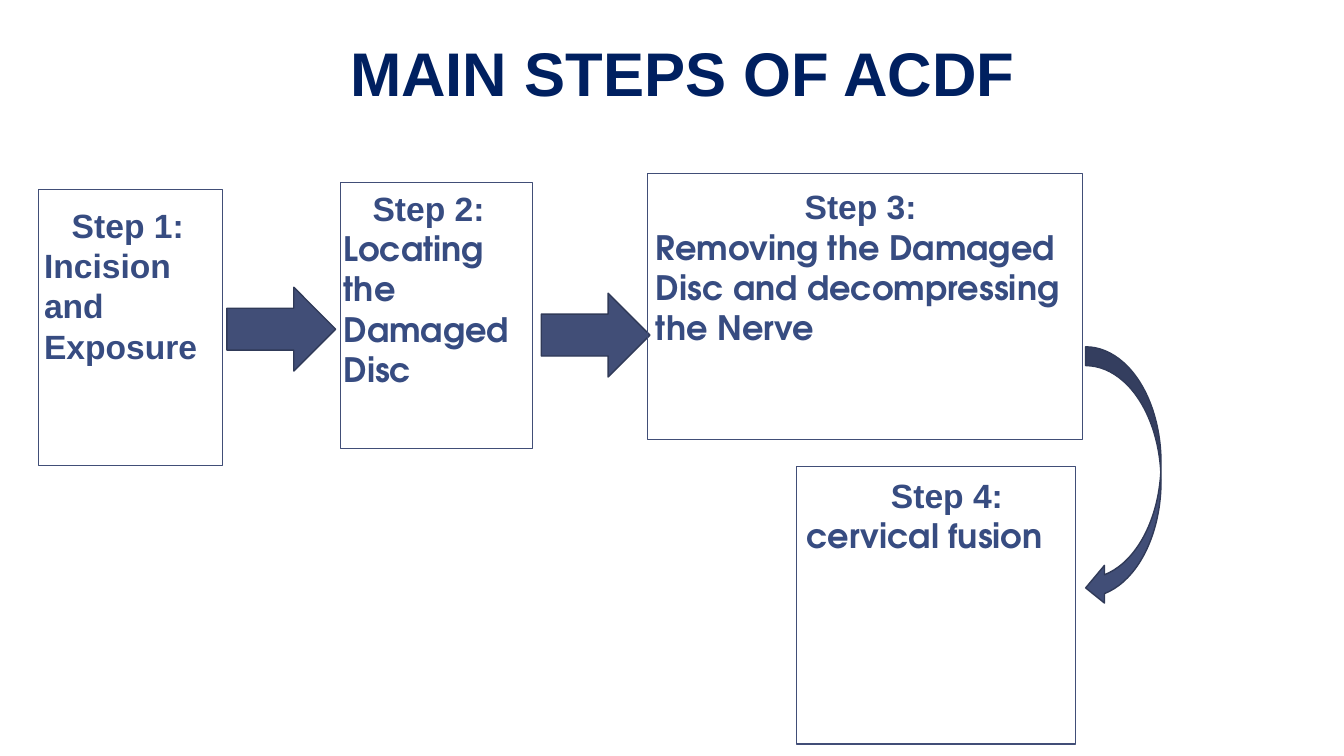
from typing import NamedTuple

from lxml import etree
from pptx import Presentation
from pptx.dml.color import RGBColor
from pptx.enum.shapes import MSO_SHAPE
from pptx.enum.text import MSO_ANCHOR, MSO_AUTO_SIZE, PP_ALIGN
from pptx.util import Cm, Pt

RECTANGLE = MSO_SHAPE.RECTANGLE
RIGHT_ARROW = MSO_SHAPE.RIGHT_ARROW
CURVED_ARROW = MSO_SHAPE.CURVED_LEFT_ARROW
CENTER = PP_ALIGN.CENTER
LEFT = PP_ALIGN.LEFT
BOTTOM = MSO_ANCHOR.BOTTOM
TOP = MSO_ANCHOR.TOP
NO_AUTO_SIZE = MSO_AUTO_SIZE.NONE

HEADING_FONT = "Arial"
ROUND_FONT = "TeX Gyre Adventor"
TITLE_COLOUR = "002060"
TEXT_COLOUR = "374C81"
ARROW_COLOUR = "414E77"
ARROW_EDGE = "303A58"


class Area(NamedTuple):
    """Left, top, width and height in centimetres."""
    left: float
    top: float
    width: float
    height: float


class Step(NamedTuple):
    description: str
    font: str
    frame: Area
    text: Area


class Arrow(NamedTuple):
    kind: MSO_SHAPE
    area: Area


STEPS = [
    Step("Incision and Exposure", HEADING_FONT,
         Area(0.97, 4.78, 4.65, 6.96), Area(0.86, 5.03, 4.72, 4.37)),
    Step("Locating the Damaged Disc", ROUND_FONT,
         Area(8.59, 4.6, 4.83, 6.71), Area(8.41, 4.6, 4.78, 5.38)),
    Step("Removing the Damaged Disc and decompressing the Nerve", ROUND_FONT,
         Area(16.31, 4.37, 10.97, 6.71), Area(16.28, 4.57, 10.82, 6.4)),
    Step("cervical fusion", ROUND_FONT,
         Area(20.07, 11.76, 7.04, 6.99), Area(20.07, 11.84, 7.59, 2.31)),
]
ARROWS = [
    Arrow(RIGHT_ARROW, Area(5.72, 7.24, 2.74, 2.11)),
    Arrow(RIGHT_ARROW, Area(13.64, 7.39, 2.74, 2.11)),
    Arrow(CURVED_ARROW, Area(27.36, 8.74, 1.9, 6.55)),
]


def colour(value: str) -> RGBColor:
    return RGBColor.from_string(value)


def lengths(area: Area) -> list[Cm]:
    return [Cm(value) for value in area]


def format_text(paragraph, font: str, size: float, text_colour: str, align) -> None:
    paragraph.alignment = align
    for span in paragraph.runs:
        span.font.name = font
        span.font.size = Pt(size)
        span.font.bold = True
        span.font.color.rgb = colour(text_colour)


def add_title(page, text: str, area: Area) -> None:
    title = page.shapes.title
    title.left, title.top, title.width, title.height = lengths(area)
    frame = title.text_frame
    frame.text = text
    frame.word_wrap = True
    frame.auto_size = NO_AUTO_SIZE
    frame.vertical_anchor = BOTTOM
    frame.margin_left = frame.margin_right = Cm(0.33)
    frame.margin_top = frame.margin_bottom = Cm(0.18)
    paragraph = frame.paragraphs[0]
    paragraph.line_spacing = 0.85
    format_text(paragraph, HEADING_FONT, 44, TITLE_COLOUR, CENTER)


def add_outline(page, kind, area: Area, line: str, width: float, fill: str = "") -> None:
    shape = page.shapes.add_shape(kind, *lengths(area))
    shape.shadow.inherit = False
    if fill:
        shape.fill.solid()
        shape.fill.fore_color.rgb = colour(fill)
    else:
        shape.fill.background()
    shape.line.color.rgb = colour(line)
    shape.line.width = Pt(width)


def add_step(page, number: int, step: Step) -> None:
    add_outline(page, RECTANGLE, step.frame, ARROW_COLOUR, 0.75)
    box = page.shapes.add_textbox(*lengths(step.text))
    frame = box.text_frame
    frame.word_wrap = True
    frame.vertical_anchor = TOP
    frame.text = f"Step {number}:\n{step.description}"
    heading, description = frame.paragraphs
    format_text(heading, HEADING_FONT, 24, TEXT_COLOUR, CENTER)
    format_text(description, step.font, 24, TEXT_COLOUR, LEFT)


def main() -> None:
    deck = Presentation()
    deck.slide_width, deck.slide_height = Cm(33.87), Cm(19.05)
    page = deck.slides.add_slide(deck.slide_layouts[5])

    # Title
    add_title(page, "MAIN STEPS OF ACDF", Area(3.1, 0.2, 28.22, 2.74))

    # Arrows between the steps
    for arrow in ARROWS:
        add_outline(page, arrow.kind, arrow.area, ARROW_EDGE, 1, ARROW_COLOUR)

    # Framed steps
    for number, step in enumerate(STEPS, start=1):
        add_step(page, number, step)

    deck.save("out.pptx")


if __name__ == "__main__":
    main()
